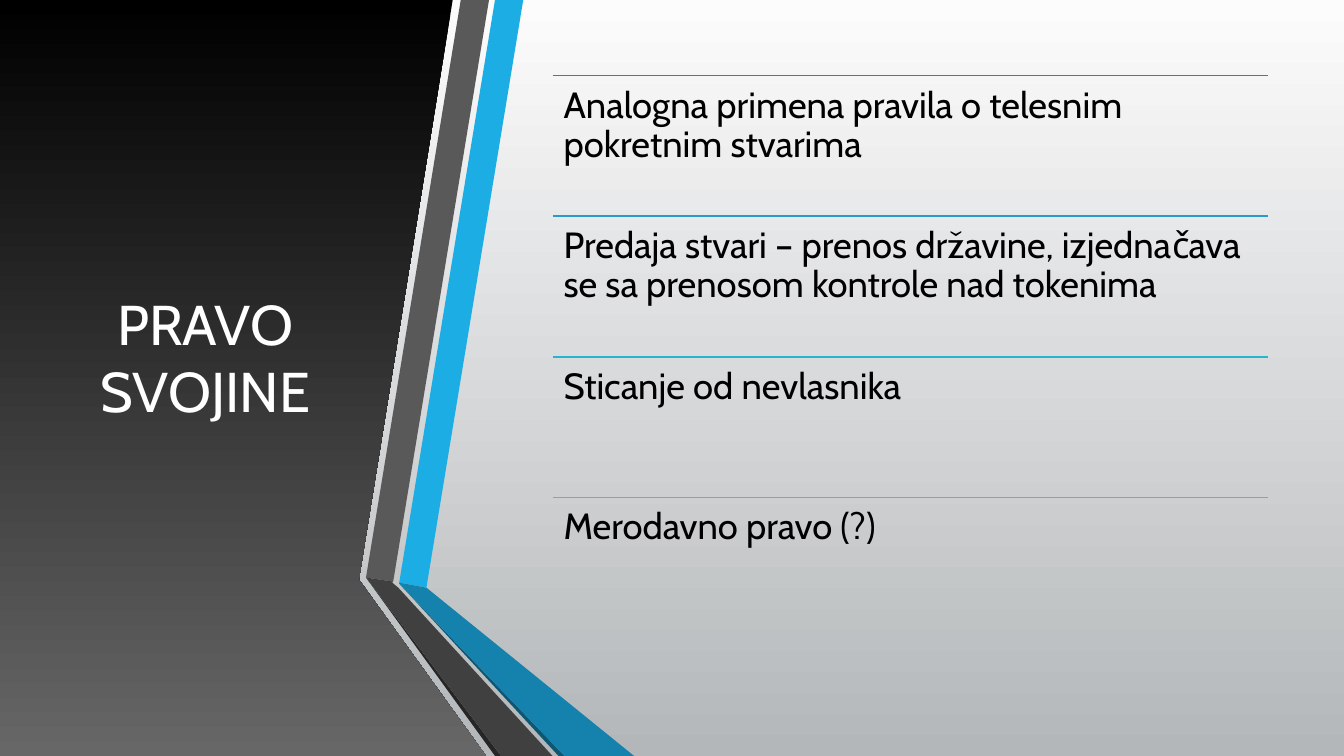
from lxml.etree import SubElement
from pptx import Presentation
from pptx.dml.color import RGBColor
from pptx.enum.text import MSO_ANCHOR, PP_ALIGN
from pptx.oxml.ns import qn
from pptx.util import Inches, Pt

WIDTH, HEIGHT = 13.33, 7.5
FONT = "Cabin"
WHITE = RGBColor(0xFF, 0xFF, 0xFF)
BLACK = RGBColor(0x00, 0x00, 0x00)
SMOKE = RGBColor(0x67, 0x67, 0x67)
MIST = RGBColor(0xFC, 0xFC, 0xFC)
SILVER = RGBColor(0xB4, 0xB7, 0xB9)
SKY = RGBColor(0x1C, 0xAD, 0xE4)
OCEAN = RGBColor(0x14, 0x82, 0xAC)
DEEP_SEA = RGBColor(0x0E, 0x57, 0x72)
GRAY = RGBColor(0x59, 0x59, 0x59)
DARK_GRAY = RGBColor(0x40, 0x40, 0x40)
CHARCOAL = RGBColor(0x26, 0x26, 0x26)

TITLE = "PRAVO SVOJINE"
TOPICS = [
    ("Analogna primena pravila o telesnim pokretnim stvarima",
     RGBColor(0x26, 0x83, 0xC6)),
    ("Predaja stvari – prenos državine, izjednačava se sa prenosom kontrole nad tokenima",
     RGBColor(0x26, 0x9B, 0xCC)),
    ("Sticanje od nevlasnika", RGBColor(0x27, 0xB4, 0xD1)),
    ("Merodavno pravo (?)", RGBColor(0x27, 0xCE, 0xD7)),
]

PANEL = [(0, 0), (4.49, 0), (3.56, 5.75), (4.82, HEIGHT), (0, HEIGHT)]
RIBBON_FACETS = [
    (SKY, [(3.96, 5.78), (4.23, 5.83), (5.19, 0), (4.91, 0)]),
    (GRAY, [(4.85, 0), (4.57, 0), (3.63, 5.73), (3.9, 5.77)]),
    (CHARCOAL, [(3.63, 5.73), (4.91, HEIGHT), (4.97, HEIGHT)]),
    (DEEP_SEA, [(3.96, 5.79), (5.54, HEIGHT), (5.6, HEIGHT)]),
    (OCEAN, [(3.96, 5.79), (5.6, HEIGHT), (6.29, HEIGHT), (4.23, 5.83), (3.96, 5.78)]),
    (DARK_GRAY, [(5.48, HEIGHT), (3.95, 5.83), (3.89, 5.78), (3.9, 5.77),
                 (3.63, 5.73), (4.97, HEIGHT)]),
]

TITLE_BOX = (0.59, 0.75, 2.89, 5.58)
LIST_LEFT, LIST_TOP, LIST_WIDTH, LIST_HEIGHT = 5.48, 0.75, 7.1, 5.58
ROW_HEIGHT = LIST_HEIGHT / len(TOPICS)


def fill_downwards(fill, top_color, bottom_color):
    fill.gradient()
    fill.gradient_angle = 270
    for stop, color in zip(fill.gradient_stops, (top_color, bottom_color)):
        stop.color.rgb = color


def add_polygon(shapes, points):
    corners = [(Inches(x), Inches(y)) for x, y in points]
    builder = shapes.build_freeform(*corners[0])
    builder.add_line_segments(corners[1:], close=True)
    polygon = builder.convert_to_shape()
    polygon.shadow.inherit = False
    polygon.line.fill.background()
    return polygon


def add_text(shapes, box, text, size, color, inset=0.1):
    """Add a wrapped one-paragraph text box; return its frame and paragraph."""
    frame = shapes.add_textbox(*map(Inches, box)).text_frame
    frame.word_wrap = True
    frame.margin_left = frame.margin_right = Inches(inset)
    frame.margin_top = frame.margin_bottom = Inches(inset)
    paragraph = frame.paragraphs[0]
    run = paragraph.add_run()
    run.text = text
    run.font.name = FONT
    run.font.size = Pt(size)
    run.font.color.rgb = color
    return frame, paragraph


def add_rule(shapes, top, color):
    ends = (LIST_LEFT, top, LIST_LEFT + LIST_WIDTH, top)
    rule = shapes.add_connector(1, *map(Inches, ends))
    rule.line.color.rgb = color
    rule.line.width = Pt(1.25)
    SubElement(rule._element.spPr, qn("a:effectLst"))


def main():
    deck = Presentation()
    deck.slide_width, deck.slide_height = Inches(WIDTH), Inches(HEIGHT)
    slide = deck.slides.add_slide(deck.slide_layouts[6])
    fill_downwards(slide.background.fill, MIST, SILVER)

    panel = add_polygon(slide.shapes, PANEL)
    fill_downwards(panel.fill, BLACK, SMOKE)

    title_frame, title = add_text(slide.shapes, TITLE_BOX, TITLE, 40, WHITE)
    title_frame.vertical_anchor = MSO_ANCHOR.MIDDLE
    title.alignment = PP_ALIGN.CENTER

    ribbon = slide.shapes.add_group_shape()
    for color, points in RIBBON_FACETS:
        facet = add_polygon(ribbon.shapes, points)
        facet.fill.solid()
        facet.fill.fore_color.rgb = color

    topic_list = slide.shapes.add_group_shape()
    for row, (topic, color) in enumerate(TOPICS):
        top = LIST_TOP + row * ROW_HEIGHT
        add_rule(topic_list.shapes, top, color)
        box = (LIST_LEFT, top, LIST_WIDTH, ROW_HEIGHT)
        _, paragraph = add_text(topic_list.shapes, box, topic, 26, BLACK, inset=0.11)
        paragraph.line_spacing = 0.9

    deck.save("out.pptx")


if __name__ == "__main__":
    main()
